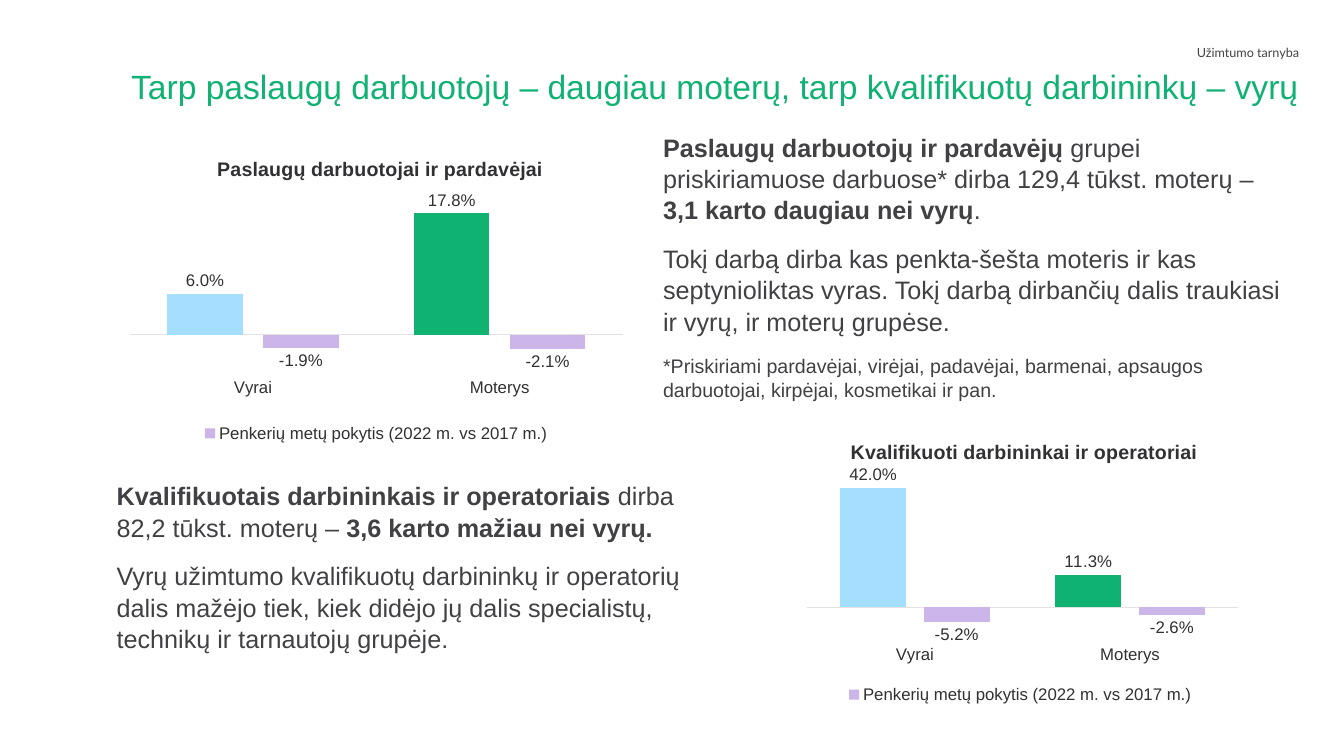
from lxml import etree
from pptx import Presentation
from pptx.chart.data import CategoryChartData
from pptx.dml.color import RGBColor
from pptx.enum.chart import (XL_CHART_TYPE, XL_LABEL_POSITION, XL_LEGEND_POSITION,
                             XL_TICK_LABEL_POSITION, XL_TICK_MARK)
from pptx.enum.text import MSO_ANCHOR, MSO_AUTO_SIZE, PP_ALIGN
from pptx.oxml.ns import qn
from pptx.util import Cm, Pt

COLUMN = XL_CHART_TYPE.COLUMN_CLUSTERED
OUTSIDE = XL_LABEL_POSITION.OUTSIDE_END
BOTTOM = XL_LEGEND_POSITION.BOTTOM
LOW = XL_TICK_LABEL_POSITION.LOW
NO_TICK = XL_TICK_MARK.NONE
TOP = MSO_ANCHOR.TOP
NO_FIT = MSO_AUTO_SIZE.NONE
LEFT, RIGHT = PP_ALIGN.LEFT, PP_ALIGN.RIGHT

TITLE_GREEN = RGBColor(0x0F, 0xB2, 0x73)
GREEN = RGBColor(0x0F, 0xB2, 0x71)
BLUE = RGBColor(0xA4, 0xDF, 0xFF)
VIOLET = RGBColor(0xCC, 0xB5, 0xE8)
TEXT_GREY = RGBColor(0x41, 0x41, 0x44)
HEADER_GREY = RGBColor(0x43, 0x42, 0x44)
CHART_GREY = RGBColor(0x31, 0x31, 0x33)
AXIS_GREY = RGBColor(0xE2, 0xE2, 0xE3)

PERCENT = "0.0%"
CHANGE = "Penkerių metų pokytis (2022 m. vs 2017 m.)"


def format_font(font, size=12, color=CHART_GREY, name="Arial", bold=False):
    font.size = Pt(size)
    font.name = name
    font.bold = bold
    font.color.rgb = color


def write(p, *pieces, align=LEFT, spacing=1.04, after=0, **style):
    """Fill a paragraph with (text, bold) pieces; a newline is a line break."""
    p.alignment = align
    p.line_spacing = spacing
    p.space_before = Pt(0)
    p.space_after = Pt(after)
    for text, bold in pieces:
        for i, line in enumerate(text.split("\n")):
            if i:
                p.add_line_break()
            if line:
                r = p.add_run()
                r.text = line
                format_font(r.font, bold=bold, **style)


def prepare_frame(tf):
    tf.word_wrap = True
    tf.auto_size = NO_FIT
    tf.vertical_anchor = TOP
    return tf


def add_text(slide, box, *paragraphs, **style):
    """Each paragraph is a pair: its pieces and its own format."""
    tf = prepare_frame(slide.shapes.add_textbox(*box).text_frame)
    for i, (pieces, own) in enumerate(paragraphs):
        p = tf.add_paragraph() if i else tf.paragraphs[0]
        write(p, *pieces, **{**style, **own})


def add_title(slide, box, text):
    sp = slide.shapes.title
    sp.left, sp.top, sp.width, sp.height = box
    tf = prepare_frame(sp.text_frame)
    write(tf.paragraphs[0], (text, False), spacing=0.9, size=24, color=TITLE_GREEN)


def set_layout(parent, index, **values):
    """Place a chart part by fractions of the chart area."""
    for old in parent.findall(qn("c:layout")):
        parent.remove(old)
    layout = etree.Element(qn("c:layout"))
    manual = etree.SubElement(layout, qn("c:manualLayout"))
    if "w" in values:
        etree.SubElement(manual, qn("c:layoutTarget")).set("val", "inner")
    for key in ("x", "y"):
        etree.SubElement(manual, qn(f"c:{key}Mode")).set("val", "edge")
    for key, value in values.items():
        etree.SubElement(manual, qn(f"c:{key}")).set("val", str(value))
    parent.insert(index, layout)


def add_share_chart(slide, box, title, shares, changes, limits, title_at, plot_at):
    data = CategoryChartData(number_format=PERCENT)
    data.categories = ["Vyrai", "Moterys"]
    data.add_series("Series 1", shares)
    data.add_series(CHANGE, changes)
    chart = slide.shapes.add_chart(COLUMN, *box, data).chart
    format_font(chart.font)

    # Title
    p = chart.chart_title.text_frame.paragraphs[0]
    r = p.add_run()
    r.text = title
    format_font(r.font, size=14, bold=True)
    set_layout(chart.chart_title._element, 1, **title_at)
    set_layout(chart._chartSpace.chart.plotArea, 0, **plot_at)

    # Axes
    axis = chart.category_axis
    axis.tick_label_position = LOW
    axis.major_tick_mark = axis.minor_tick_mark = NO_TICK
    axis.format.line.color.rgb = AXIS_GREY
    axis.format.line.width = Pt(0.75)
    format_font(axis.tick_labels.font)
    values = chart.value_axis
    values.minimum_scale, values.maximum_scale = limits
    values.has_major_gridlines = False
    values.tick_labels.number_format = PERCENT
    values.tick_labels.number_format_is_linked = False
    values.visible = False

    # Columns
    plot = chart.plots[0]
    plot.gap_width = 100
    plot.overlap = -27
    plot.vary_by_categories = False
    for series, color in zip(plot.series, (GREEN, VIOLET)):
        series.invert_if_negative = False
        series.format.fill.solid()
        series.format.fill.fore_color.rgb = color
        labels = series.data_labels
        labels.show_value = True
        labels.number_format = PERCENT
        labels.number_format_is_linked = False
        labels.position = OUTSIDE
        format_font(labels.font)
    men = plot.series[0].points[0].format.fill
    men.solid()
    men.fore_color.rgb = BLUE

    # Legend without the first series
    chart.has_legend = True
    legend = chart.legend
    legend.position = BOTTOM
    legend.include_in_layout = False
    format_font(legend.font)
    entry = etree.Element(qn("c:legendEntry"))
    etree.SubElement(entry, qn("c:idx")).set("val", "0")
    etree.SubElement(entry, qn("c:delete")).set("val", "1")
    legend._element.find(qn("c:legendPos")).addnext(entry)


def main():
    prs = Presentation()
    prs.slide_width, prs.slide_height = Cm(33.87), Cm(19.05)
    slide = prs.slides.add_slide(prs.slide_layouts[5])

    # Header and title
    add_text(slide, (Cm(21.56), Cm(1), Cm(11.43), Cm(1.19)),
             ([("Užimtumo tarnyba", False)], {}),
             align=RIGHT, spacing=1.0, size=9, name="Lato", color=HEADER_GREY)
    add_title(slide, (Cm(3.05), Cm(1.65), Cm(30.23), Cm(1.42)),
              "Tarp paslaugų darbuotojų – daugiau moterų, tarp kvalifikuotų darbininkų – vyrų")

    # Service workers
    add_text(slide, (Cm(16.46), Cm(3.17), Cm(16.43), Cm(6.93)),
             ([("Paslaugų darbuotojų ir pardavėjų ", True),
               ("grupei priskiriamuose darbuose* dirba 129,4 tūkst. moterų – \n", False),
               ("3,1 karto daugiau nei vyrų", True), (".", False)], {"after": 12}),
             ([("Tokį darbą dirba kas penkta-šešta moteris ir kas septynioliktas vyras. "
                "Tokį darbą dirbančių dalis traukiasi ir vyrų, ir moterų grupėse.", False)],
              {"after": 12}),
             ([("*Priskiriami pardavėjai, virėjai, padavėjai, barmenai, apsaugos "
                "darbuotojai, kirpėjai, kosmetikai ir pan.", False)], {"size": 14}),
             size=18, color=TEXT_GREY)
    add_share_chart(slide, (Cm(2.87), Cm(3.38), Cm(13.23), Cm(7.87)),
                    "Paslaugų darbuotojai ir pardavėjai",
                    (0.06, 0.178), (-0.019, -0.021), (-0.05, 0.2),
                    {"x": 0.19, "y": 0.06},
                    {"x": 0.03, "y": 0.206, "w": 0.94, "h": 0.546})

    # Skilled workers
    add_text(slide, (Cm(2.69), Cm(11.96), Cm(15.85), Cm(4.52)),
             ([("Kvalifikuotais darbininkais ir operatoriais ", True),
               ("dirba 82,2 tūkst. moterų – ", False),
               ("3,6 karto mažiau nei vyrų.", True)], {"after": 12}),
             ([("Vyrų užimtumo kvalifikuotų darbininkų ir operatorių dalis mažėjo tiek, "
                "kiek didėjo jų dalis specialistų, technikų ir tarnautojų grupėje.", False)],
              {}),
             size=18, color=TEXT_GREY)
    add_share_chart(slide, (Cm(19.1), Cm(10.54), Cm(13.23), Cm(7.29)),
                    "Kvalifikuoti darbininkai ir operatoriai",
                    (0.42, 0.113), (-0.052, -0.026), (-0.1, 0.5),
                    {"x": 0.17, "y": 0.06},
                    {"x": 0.094, "y": 0.161, "w": 0.82, "h": 0.591})

    prs.save("out.pptx")


if __name__ == "__main__":
    main()
